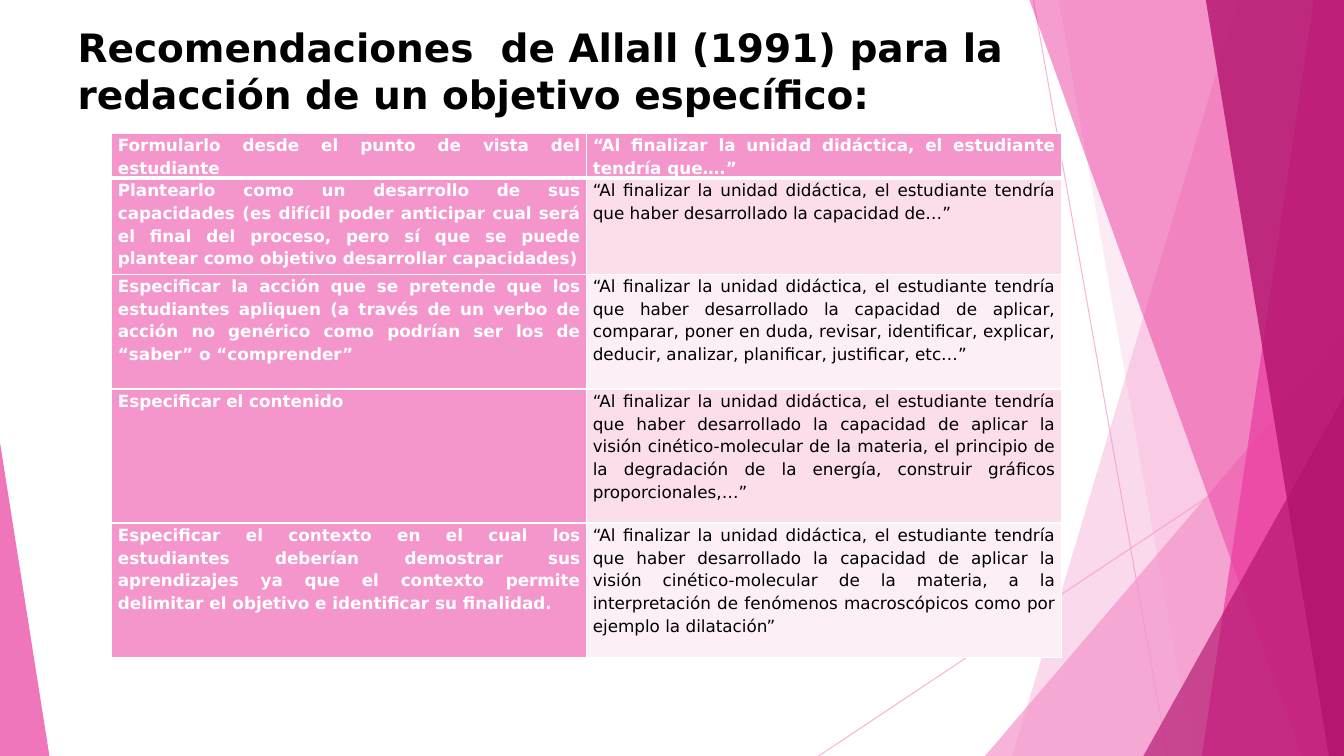
from lxml import etree
from pptx import Presentation
from pptx.dml.color import RGBColor
from pptx.enum import shapes, text
from pptx.oxml import ns
from pptx.util import Inches, Pt

FONT = "DejaVu Sans"
W, H = 13.33, 7.5
COLORS = {"white": "FFFFFF", "black": "000000", "pink": "F496CB",
          "rose": "EB3D9F", "plum": "B2136D", "band": "FBDDEC", "pale": "FDEFF6"}
ROW_HEIGHTS = [0.38, 0.95, 1.14, 1.33, 1.33]
START = "“Al finalizar la unidad didáctica, el estudiante tendría que"
SKILL = START + " haber desarrollado la capacidad de"
MATTER = SKILL + " aplicar la visión cinético-molecular de la materia, "
ROWS = [
    ("Formularlo desde el punto de vista del estudiante", START + "….”"),
    ("Plantearlo como un desarrollo de sus capacidades (es difícil poder anticipar "
     "cual será el final del proceso, pero sí que se puede plantear como objetivo "
     "desarrollar capacidades)", SKILL + "…”"),
    ("Especificar la acción que se pretende que los estudiantes apliquen (a través "
     "de un verbo de acción no genérico como podrían ser los de “saber” o "
     "“comprender”",
     SKILL + " aplicar, comparar, poner en duda, revisar, identificar, explicar, "
     "deducir, analizar, planificar, justificar, etc…”"),
    ("Especificar el contenido",
     MATTER + "el principio de la degradación de la energía, construir gráficos "
     "proporcionales,…”"),
    ("Especificar el contexto en el cual los estudiantes deberían demostrar sus "
     "aprendizajes ya que el contexto permite delimitar el objetivo e identificar "
     "su finalidad.",
     MATTER + "a la interpretación de fenómenos macroscópicos como por ejemplo la "
     "dilatación”"),
]


def rgb(name):
    return RGBColor.from_string(COLORS[name])


def set_alpha(el, percent):
    clr = el.find(".//" + ns.qn("a:srgbClr"))
    etree.SubElement(clr, ns.qn("a:alpha"), val=str(percent * 1000))


def write(tf, content, size, color="black", bold=False, align=None,
          spacing=None, after=None):
    p = tf.paragraphs[0]
    p.alignment, p.line_spacing = align, spacing
    if after is not None:
        p.space_after = Pt(after)
    r = p.add_run()
    r.text = content
    r.font.name, r.font.size, r.font.bold = FONT, Pt(size), bold
    r.font.color.rgb = rgb(color)


def paint(sp, color, alpha):
    sp.shadow.inherit = False
    sp.fill.solid()
    sp.fill.fore_color.rgb = rgb(color)
    sp.line.fill.background()
    set_alpha(sp.fill._xPr, alpha)


def add_thin_line(s, x1, y1, x2, y2):
    c = s.shapes.add_connector(shapes.MSO_CONNECTOR.STRAIGHT, Inches(x1),
                               Inches(y1), Inches(x2), Inches(y2))
    c.line.color.rgb = rgb("pink")
    c.line.width = Pt(0.75)
    set_alpha(c.line._ln, 70)
    etree.SubElement(c._element.spPr, ns.qn("a:effectLst"))


def add_facet(s, top_x, bottom_x, color, alpha):
    """Full-height band from a slanted left edge to the slide's right edge."""
    fb = s.shapes.build_freeform(Inches(top_x), 0)
    fb.add_line_segments([(Inches(x), Inches(y)) for x, y in
                          ((W, 0), (W, H), (bottom_x, H))])
    paint(fb.convert_to_shape(), color, alpha)


def add_corner(s, x, y, width, apex, color, alpha):
    """Triangle standing on the slide's bottom edge."""
    sp = s.shapes.add_shape(shapes.MSO_SHAPE.ISOSCELES_TRIANGLE, Inches(x),
                            Inches(y), Inches(width), Inches(H - y))
    sp.adjustments[0] = apex
    paint(sp, color, alpha)


def set_borders(cell, top, bottom):
    tcPr = cell._tc.get_or_add_tcPr()
    for i, (side, width) in enumerate((("L", 1), ("R", 1), ("T", top), ("B", bottom))):
        ln = etree.Element(ns.qn("a:ln" + side), w=str(Pt(width)))
        fill = etree.SubElement(ln, ns.qn("a:solidFill"))
        etree.SubElement(fill, ns.qn("a:srgbClr"), val=COLORS["white"])
        tcPr.insert(i, ln)


def add_decoration(s):
    add_thin_line(s, 10.25, 0, 11.58, H)
    add_thin_line(s, W, 4.03, 8.12, H)
    add_facet(s, 12.28, 10.04, "pink", 36)
    add_facet(s, 10.5, 11.83, "pink", 20)
    add_corner(s, 9.77, 3.33, 3.56, 1, "pink", 72)
    add_facet(s, 10.21, 12.91, "rose", 50)
    add_facet(s, 13.03, 11.92, "rose", 70)
    add_facet(s, 11.96, 13.18, "plum", 80)
    add_corner(s, 11.34, 3.93, 1.99, 1, "plum", 66)
    add_corner(s, 0, 4.39, 0.49, 0, "rose", 70)


def add_title(s, content):
    sp = s.shapes.title
    sp.left, sp.top, sp.width, sp.height = map(Inches, (0.67, 0.18, 9.4, 1.44))
    tf = sp.text_frame
    tf.word_wrap = True
    tf.auto_size = text.MSO_AUTO_SIZE.NONE
    tf.vertical_anchor = text.MSO_ANCHOR.TOP
    write(tf, content, 27.9, bold=True, align=text.PP_ALIGN.LEFT, spacing=1.0)


def add_advice_table(s):
    table = s.shapes.add_table(len(ROWS), 2, Inches(1.11), Inches(1.32),
                               Inches(9.42), Inches(sum(ROW_HEIGHTS))).table
    for i, (row, height) in enumerate(zip(ROWS, ROW_HEIGHTS)):
        table.rows[i].height = Inches(height)
        for j, content in enumerate(row):
            cell = table.cell(i, j)
            strong = i == 0 or j == 0
            cell.margin_left = cell.margin_right = Inches(0.06)
            cell.margin_top = cell.margin_bottom = 0
            cell.fill.solid()
            cell.fill.fore_color.rgb = rgb("pink" if strong else
                                           "band" if i % 2 else "pale")
            set_borders(cell, top=3 if i == 1 else 1, bottom=3 if i == 0 else 1)
            write(cell.text_frame, content, 12, "white" if strong else "black",
                  strong, text.PP_ALIGN.JUSTIFY, spacing=1.15, after=10)


def main():
    prs = Presentation()
    prs.slide_width, prs.slide_height = Inches(W), Inches(H)
    s = prs.slides.add_slide(prs.slide_layouts[5])
    add_decoration(s)
    add_title(s, "Recomendaciones  de Allall (1991) para la redacción "
                 "de un objetivo específico:")
    add_advice_table(s)
    prs.save("out.pptx")


if __name__ == "__main__":
    main()
